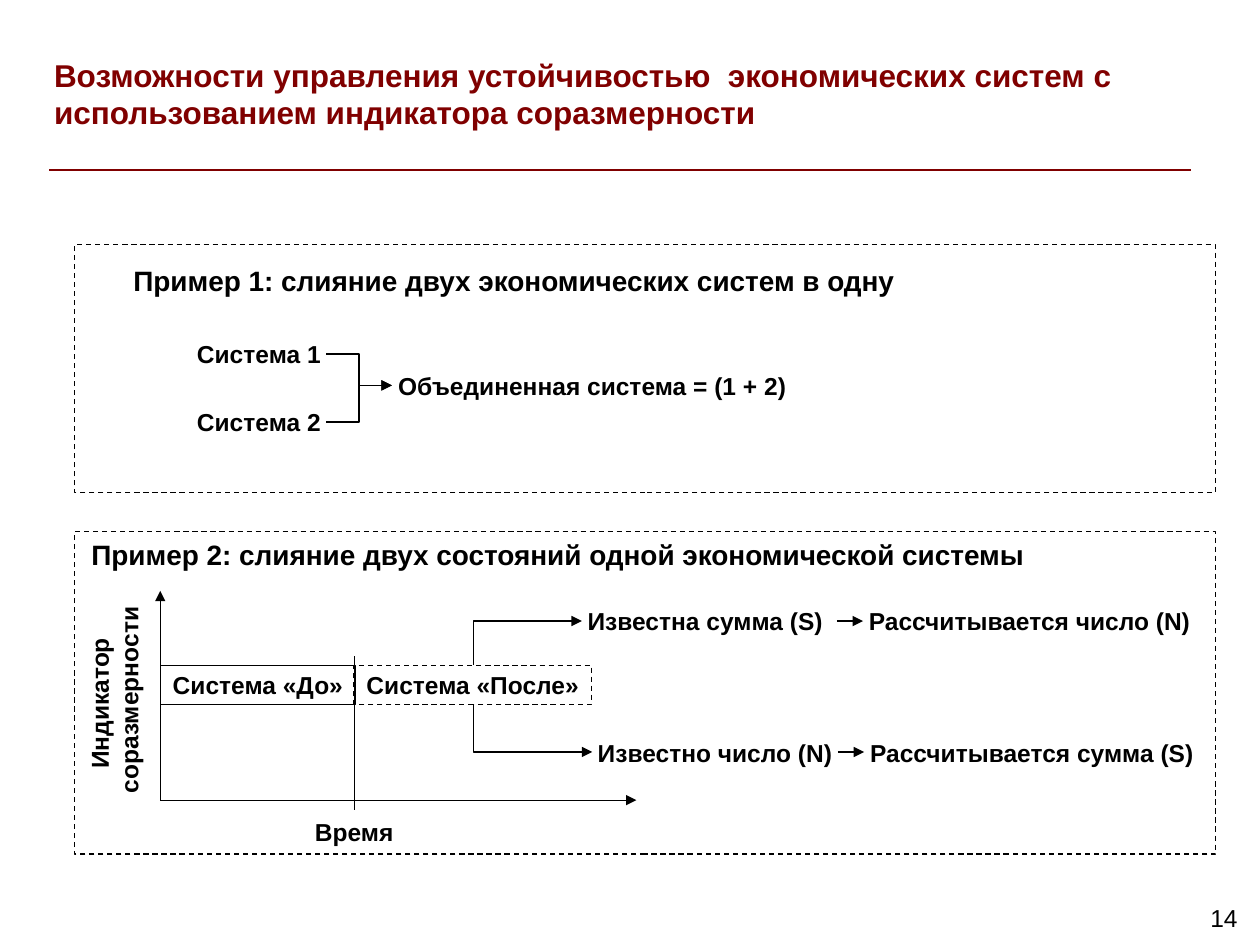
"""Build the slide on steering economic systems with the proportionality indicator."""
from dataclasses import dataclass

from lxml import etree
from pptx import Presentation
from pptx import util as u
from pptx.dml.color import RGBColor
from pptx.enum import dml, shapes, text
from pptx.oxml import ns

MAROON = RGBColor(0x80, 0x00, 0x00)
BLACK = RGBColor(0x00, 0x00, 0x00)
FONT = "Arial"
CENTER, LEFT, RIGHT = text.PP_ALIGN.CENTER, text.PP_ALIGN.LEFT, text.PP_ALIGN.RIGHT
STRAIGHT, ELBOW = shapes.MSO_CONNECTOR.STRAIGHT, shapes.MSO_CONNECTOR.ELBOW


@dataclass(frozen=True)
class Label:
    lines: tuple[str, ...]
    left: float
    top: float
    width: float
    height: float = 0.79
    size: float = 14
    bold: bool = True
    color: RGBColor = BLACK
    align: text.PP_ALIGN = CENTER
    anchor: text.MSO_ANCHOR = text.MSO_ANCHOR.MIDDLE
    insets: tuple[float, float, float, float] = (0.1, 0.1, 0.1, 0.1)
    wrap: bool = False
    rotation: float = 0


@dataclass(frozen=True)
class Frame:
    label: Label
    dashed: bool = True


@dataclass(frozen=True)
class Link:
    x1: float
    y1: float
    x2: float
    y2: float
    kind: shapes.MSO_CONNECTOR = STRAIGHT
    arrow: bool = True
    color: RGBColor = BLACK
    weight: float = 0.75


HEADER = (
    Label(("Возможности управления устойчивостью  экономических систем с "
           "использованием индикатора соразмерности",), 0.99, 0.99, 21.89, 2.39,
          size=18, color=MAROON, align=LEFT, anchor=text.MSO_ANCHOR.TOP,
          insets=(0.1, 0.13, 0, 0.13), wrap=True),
    Label(("14",), 22.56, 18.08, 2.64, 0.97, bold=False, align=RIGHT,
          anchor=text.MSO_ANCHOR.TOP, insets=(0.25, 0.13, 0.25, 0.13), wrap=True),
)
MERGER_LABELS = (
    Label(("Пример 1: слияние двух экономических систем в одну",), 2.49, 5.21, 15.75, 0.89, size=16),
    Label(("Система 1",), 3.86, 6.73, 2.72),
    Label(("Система 2",), 3.86, 8.1, 2.72),
    Label(("Объединенная система = (1 + 2)",), 7.9, 7.39, 8.08),
)
STATE_LABELS = (
    Label(("Пример 2: слияние двух состояний одной экономической системы",), 1.7, 10.72, 19.1, 0.89, size=16),
    Label(("Известна сумма (S) ",), 11.73, 12.12, 5.11),
    Label(("Рассчитывается число (N)",), 17.4, 12.12, 6.71),
    Label(("Известно число (N)",), 11.94, 14.73, 4.95, 0.89),
    Label(("Рассчитывается сумма (S)",), 17.42, 14.73, 6.76, 0.89),
    Label(("Время",), 6.04, 16.38, 2.2),
    Label(("Индикатор ", "соразмерности"), 0.3, 13.41, 3.99, 1.4, rotation=270),
)
FRAMES = (
    Frame(Label(("Система «До»",), 3.23, 13.41, 3.94, wrap=True), dashed=False),
    Frame(Label(("Система «После»",), 7.14, 13.41, 4.78, wrap=True)),
    Frame(Label((), 1.5, 4.93, 23.01, 5)),
    Frame(Label((), 1.5, 10.72, 23.01, 6.5)),
)
LINKS = (
    Link(0.99, 3.43, 24, 3.43, arrow=False, color=MAROON, weight=1.5),
    Link(6.58, 7.14, 7.9, 7.77, ELBOW),
    Link(6.58, 8.51, 7.9, 7.77, ELBOW),
    Link(3.23, 16.13, 3.23, 11.91),
    Link(3.23, 16.13, 12.83, 16.13),
    Link(7.14, 13.23, 7.14, 16.33, arrow=False),
    Link(16.87, 12.52, 17.4, 12.52),
    Link(16.89, 15.16, 17.42, 15.16),
)
BRANCHES = (
    Link(9.55, 13.41, 11.73, 12.52, ELBOW),
    Link(9.55, 14.2, 11.94, 15.16, ELBOW),
)


def write_lines(frame, label: Label) -> None:
    frame.word_wrap = label.wrap
    frame.auto_size = text.MSO_AUTO_SIZE.NONE if label.wrap else text.MSO_AUTO_SIZE.SHAPE_TO_FIT_TEXT
    frame.vertical_anchor = label.anchor
    (frame.margin_left, frame.margin_top,
     frame.margin_right, frame.margin_bottom) = map(u.Cm, label.insets)
    for index, line in enumerate(label.lines):
        paragraph = frame.add_paragraph() if index else frame.paragraphs[0]
        paragraph.alignment = label.align
        run = paragraph.add_run()
        run.text = line
        run.font.name = FONT
        run.font.size = u.Pt(label.size)
        run.font.bold = label.bold
        run.font.color.rgb = label.color


def add_label(slide, label: Label) -> None:
    box = slide.shapes.add_textbox(*map(u.Cm, (label.left, label.top, label.width, label.height)))
    box.rotation = label.rotation
    write_lines(box.text_frame, label)


def add_frame(slide, frame: Frame) -> None:
    label = frame.label
    outline = slide.shapes.add_shape(
        shapes.MSO_SHAPE.RECTANGLE, *map(u.Cm, (label.left, label.top, label.width, label.height)))
    outline.shadow.inherit = False
    outline.fill.background()
    outline.line.color.rgb = BLACK
    outline.line.width = u.Pt(0.75)
    if frame.dashed:
        outline.line.dash_style = dml.MSO_LINE.DASH
    if label.lines:
        write_lines(outline.text_frame, label)


def add_link(slide, link: Link):
    connector = slide.shapes.add_connector(
        link.kind, *map(u.Cm, (link.x1, link.y1, link.x2, link.y2)))
    connector.line.color.rgb = link.color
    connector.line.width = u.Pt(link.weight)
    properties = connector.element.spPr
    if link.arrow:
        etree.SubElement(properties.find(ns.qn("a:ln")), ns.qn("a:tailEnd"), type="triangle")
    etree.SubElement(properties, ns.qn("a:effectLst"))
    return connector


def add_branch(slide, branch: Link) -> None:
    """Draw a one-bend arrow that leaves vertically and arrives from the left."""
    center_x, center_y = (branch.x1 + branch.x2) / 2, (branch.y1 + branch.y2) / 2
    rises = branch.y2 < branch.y1
    half_width = abs(branch.y2 - branch.y1) / 2
    half_height = (branch.x2 - branch.x1) / 2 * (1 if rises else -1)
    connector = add_link(slide, Link(center_x + half_width, center_y + half_height,
                                     center_x - half_width, center_y - half_height, ELBOW))
    properties = connector.element.spPr
    properties.find(ns.qn("a:xfrm")).set("rot", str((90 if rises else 270) * 60000))
    properties.find(ns.qn("a:prstGeom")).set("prst", "bentConnector2")


def main() -> None:
    deck = Presentation()
    deck.slide_width, deck.slide_height = u.Cm(25.4), u.Cm(19.05)
    slide = deck.slides.add_slide(deck.slide_layouts[6])
    for frame in FRAMES:
        add_frame(slide, frame)
    for link in LINKS:
        add_link(slide, link)
    for branch in BRANCHES:
        add_branch(slide, branch)
    for label in HEADER + MERGER_LABELS + STATE_LABELS:
        add_label(slide, label)
    deck.save("out.pptx")


if __name__ == "__main__":
    main()
